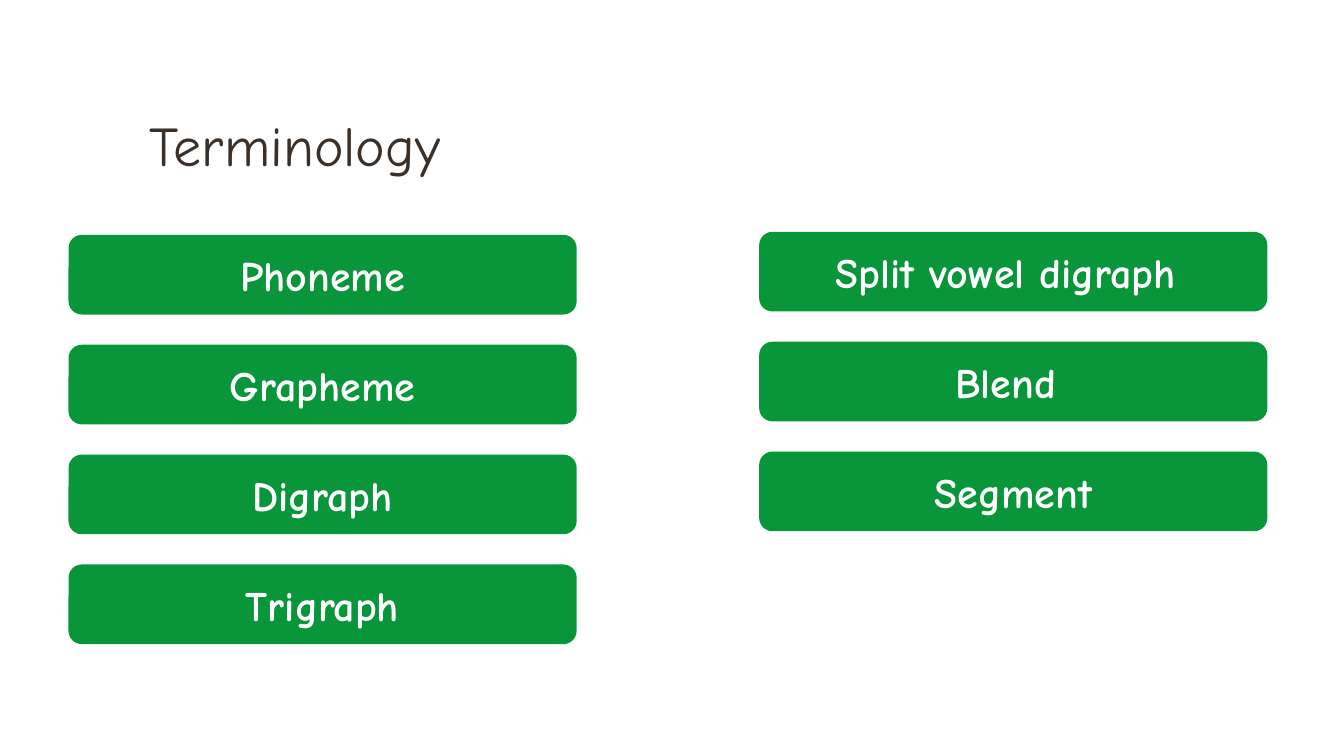
from pptx import Presentation
from pptx.dml.color import RGBColor
from pptx.enum.shapes import MSO_SHAPE
from pptx.enum.text import MSO_ANCHOR, PP_ALIGN
from pptx.util import Inches, Pt

COLORS = {"green": "09963B", "white": "FFFFFF", "brown": "39302A"}
FONT = "Comic Neue"

# Each column: left edge, top of its first card, terms from top to bottom
COLUMNS = [
    (0.68, 2.33, ["Phoneme", "Grapheme", "Digraph", "Trigraph"]),
    (7.53, 2.3, ["Split vowel digraph ", "Blend ", "Segment"]),
]
CARD_WIDTH, CARD_HEIGHT, CARD_PITCH = 5.04, 0.79, 1.09


def write_text(shape, text, *, size, color, bold=False,
               align=PP_ALIGN.LEFT, anchor=MSO_ANCHOR.MIDDLE):
    frame = shape.text_frame
    frame.word_wrap = True
    frame.vertical_anchor = anchor
    paragraph = frame.paragraphs[0]
    paragraph.alignment = align
    run = paragraph.add_run()
    run.text = text
    run.font.name = FONT
    run.font.size = Pt(size)
    run.font.bold = bold
    run.font.color.rgb = RGBColor.from_string(COLORS[color])


def add_title(slide, text):
    title = slide.shapes.title
    title.left, title.top = Inches(1.38), Inches(0.55)
    title.width, title.height = Inches(10.71), Inches(1.26)
    write_text(title, text, size=40, color="brown", anchor=MSO_ANCHOR.BOTTOM)


def add_card(slide, left, top, term):
    card = slide.shapes.add_shape(
        MSO_SHAPE.ROUNDED_RECTANGLE, Inches(left), Inches(top),
        Inches(CARD_WIDTH), Inches(CARD_HEIGHT))
    card.shadow.inherit = False
    card.fill.solid()
    card.fill.fore_color.rgb = RGBColor.from_string(COLORS["green"])
    card.line.fill.background()
    write_text(card, term, size=30, color="white", bold=True,
               align=PP_ALIGN.CENTER)


def main():
    presentation = Presentation()
    presentation.slide_width = Inches(13.33)
    presentation.slide_height = Inches(7.5)
    title_only = presentation.slide_layouts[5]
    slide = presentation.slides.add_slide(title_only)

    add_title(slide, "Terminology")

    # Term cards
    for left, first_top, terms in COLUMNS:
        for row, term in enumerate(terms):
            add_card(slide, left, first_top + row * CARD_PITCH, term)

    presentation.save("out.pptx")


if __name__ == "__main__":
    main()
